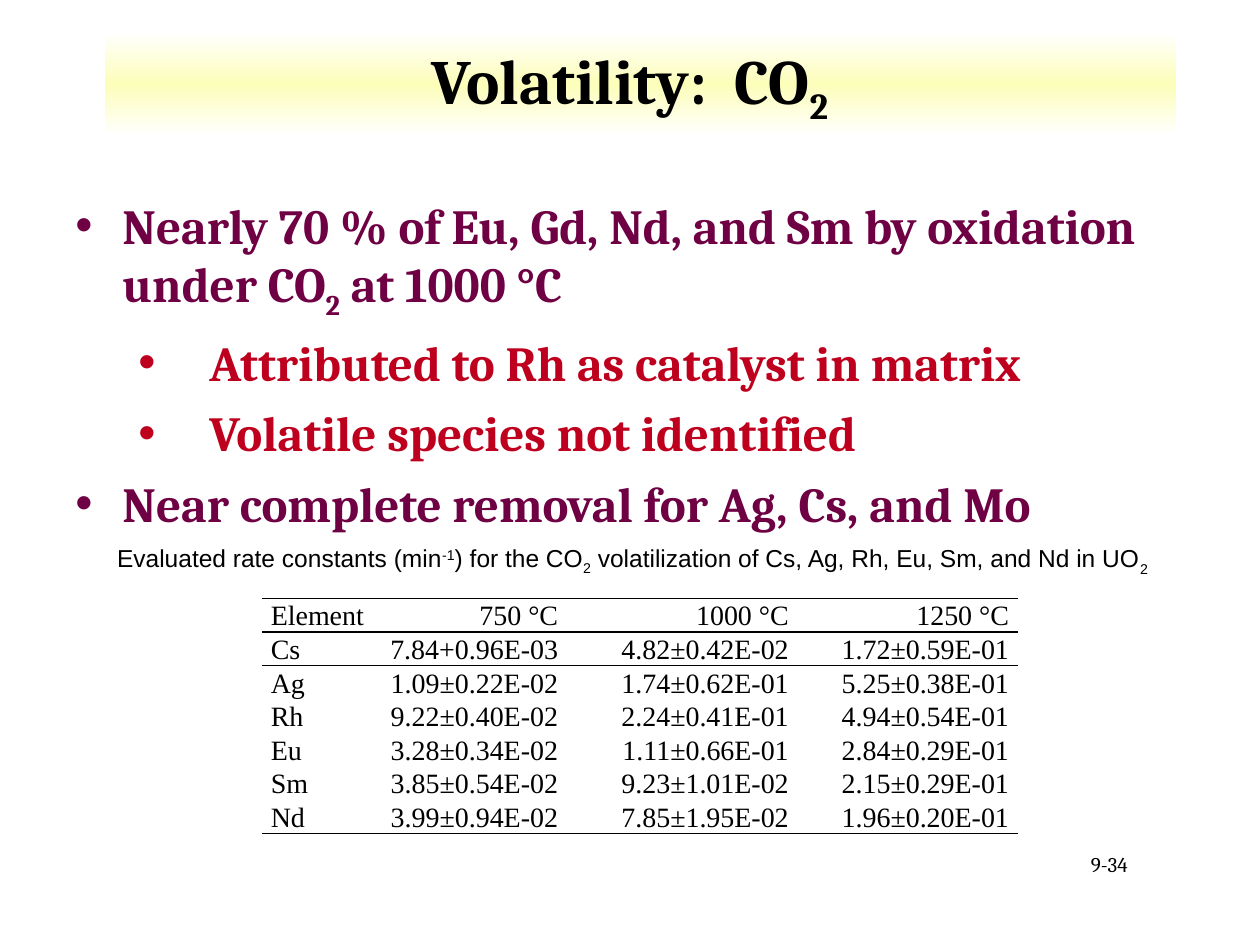
"""Build the slide on volatility under carbon dioxide."""
from copy import deepcopy
from dataclasses import dataclass, field

from lxml.etree import SubElement
from pptx import Presentation
from pptx.dml.color import RGBColor
from pptx.enum.shapes import MSO_SHAPE
from pptx.enum.text import MSO_ANCHOR, PP_ALIGN
from pptx.oxml.ns import qn
from pptx.util import Cm, Pt


@dataclass(frozen=True)
class Theme:
    black: str = "000000"
    white: str = "FFFFFF"
    band: str = "FCFEB9"
    purple: str = "6E0043"
    red: str = "BE001E"
    serif: str = "Cambria"
    sans: str = "Arial"
    tabular: str = "Times New Roman"
    title: float = 36
    body: float = 28
    cell: float = 16
    caption: float = 14
    number: float = 12
    rule: float = 1
    plain_table: str = "{2D5ABB26-0587-4C30-8999-92F81FD0307C}"


THEME = Theme()


@dataclass(frozen=True)
class Span:
    text: str
    baseline: int = 0


@dataclass(frozen=True)
class Style:
    name: str
    size: float
    color: str = THEME.black
    bold: bool = False


@dataclass(frozen=True)
class Place:
    left: float
    top: float
    width: float
    height: float

    def lengths(self) -> tuple:
        return tuple(Cm(n) for n in (self.left, self.top, self.width, self.height))


@dataclass(frozen=True)
class Bullet:
    spans: list[Span]
    color: str = THEME.purple
    level: int = 0
    margin: float = 0.95
    hanging: float = 0.95


@dataclass(frozen=True)
class RateTable:
    place: Place
    widths: list[float]
    rows: list[list[str]] = field(default_factory=list)


def sub_bullet(text: str) -> Bullet:
    return Bullet([Span(text)], THEME.red, 1, 2.7, 1.43)


TITLE = [Span("Volatility:  CO"), Span("2", -25)]
BULLETS = [
    Bullet([Span("Nearly 70 % of Eu, Gd, Nd, and Sm by oxidation under CO"),
            Span("2", -25), Span(" at 1000 °C")]),
    sub_bullet("Attributed to Rh as catalyst in matrix"),
    sub_bullet("Volatile species not identified"),
    Bullet([Span("Near complete removal for Ag, Cs, and Mo")]),
]
CAPTION = [
    Span("Evaluated rate constants (min"), Span("-1", 30), Span(") for the CO"), Span("2", -25),
    Span(" volatilization of Cs, Ag, Rh, Eu, Sm, and Nd in UO"), Span("2", -30),
]
RATES = RateTable(Place(5.28, 12.06, 15.24, 3.27), [2.34, 3.81, 4.65, 4.44], [
    ["Element", "750 °C", "1000 °C", "1250 °C"],
    ["Cs", "7.84+0.96E-03", "4.82±0.42E-02", "1.72±0.59E-01"],
    ["Ag", "1.09±0.22E-02", "1.74±0.62E-01", "5.25±0.38E-01"],
    ["Rh", "9.22±0.40E-02", "2.24±0.41E-01", "4.94±0.54E-01"],
    ["Eu", "3.28±0.34E-02", "1.11±0.66E-01", "2.84±0.29E-01"],
    ["Sm", "3.85±0.54E-02", "9.23±1.01E-02", "2.15±0.29E-01"],
    ["Nd", "3.99±0.94E-02", "7.85±1.95E-02", "1.96±0.20E-01"],
])


def apply(target, values: dict) -> None:
    for name, value in values.items():
        setattr(target, name, value)


def write(para, spans: list[Span], style: Style) -> None:
    for span in spans:
        run = para.add_run()
        run.text = span.text
        apply(run.font, {"name": style.name, "size": Pt(style.size), "bold": style.bold})
        run.font.color.rgb = RGBColor.from_string(style.color)
        if span.baseline:
            run._r.get_or_add_rPr().set("baseline", str(span.baseline * 1000))


def add_title(page, place: Place) -> None:
    box = page.shapes.add_shape(MSO_SHAPE.RECTANGLE, *place.lengths())
    box.shadow.inherit = False
    box.line.fill.background()
    box.fill.gradient()
    box.fill.gradient_angle = 90
    stops = next(box.element.iter(qn("a:gsLst")))
    stops.append(deepcopy(stops[0]))
    colors = (THEME.white, THEME.band, THEME.white)
    for index, (stop, color) in enumerate(zip(box.fill.gradient_stops, colors)):
        stop.position = index / 2
        stop.color.rgb = RGBColor.from_string(color)
    apply(box.text_frame, {"word_wrap": True, "vertical_anchor": MSO_ANCHOR.MIDDLE,
                           "margin_right": Cm(0.67)})
    para = box.text_frame.paragraphs[0]
    para.alignment = PP_ALIGN.CENTER
    write(para, TITLE, Style(THEME.serif, THEME.title, bold=True))


def add_text(page, place: Place, spans: list[Span], style: Style, wrap: bool = True) -> None:
    box = page.shapes.add_textbox(*place.lengths())
    box.text_frame.word_wrap = wrap
    write(box.text_frame.paragraphs[0], spans, style)


def add_bullets(page, place: Place, bullets: list[Bullet]) -> None:
    frame = page.shapes.add_textbox(*place.lengths()).text_frame
    frame.word_wrap = True
    for index, bullet in enumerate(bullets):
        para = frame.add_paragraph() if index else frame.paragraphs[0]
        apply(para, {"level": bullet.level, "space_before": Pt(6.6)})
        properties = para._p.get_or_add_pPr()
        properties.set("marL", str(Cm(bullet.margin)))
        properties.set("indent", str(-Cm(bullet.hanging)))
        SubElement(properties, qn("a:buFont"), typeface=THEME.sans)
        SubElement(properties, qn("a:buChar"), char="•")
        write(para, bullet.spans, Style(THEME.serif, THEME.body, bullet.color, True))


def add_border(cell, side: str) -> None:
    line = SubElement(cell._tc.get_or_add_tcPr(), qn(f"a:ln{side}"), w=str(Pt(THEME.rule)))
    SubElement(SubElement(line, qn("a:solidFill")), qn("a:srgbClr"), val=THEME.black)


def add_rates(page, rates: RateTable) -> None:
    last = len(rates.rows) - 1
    frame = page.shapes.add_table(last + 1, len(rates.widths), *rates.place.lengths())
    table = frame.table
    apply(table, {"first_row": False, "horz_banding": False})
    next(frame.element.iter(qn("a:tableStyleId"))).text = THEME.plain_table
    for column, width in zip(table.columns, rates.widths):
        column.width = Cm(width)
    for row_index, values in enumerate(rates.rows):
        table.rows[row_index].height = Cm(0.46)
        for column_index, value in enumerate(values):
            cell = table.cell(row_index, column_index)
            apply(cell, {"vertical_anchor": MSO_ANCHOR.BOTTOM, "margin_left": Cm(0.18),
                         "margin_right": Cm(0.18), "margin_top": 0, "margin_bottom": 0})
            if row_index in (0, 1):
                add_border(cell, "T")
            if row_index in (0, last):
                add_border(cell, "B")
            cell.fill.background()
            para = cell.text_frame.paragraphs[0]
            para.alignment = PP_ALIGN.RIGHT if column_index else PP_ALIGN.LEFT
            write(para, [Span(value)], Style(THEME.tabular, THEME.cell))


def main() -> None:
    deck = Presentation()
    apply(deck, {"slide_width": Cm(25.4), "slide_height": Cm(19.05)})
    page = deck.slides.add_slide(deck.slide_layouts[6])
    add_text(page, Place(21.74, 17.04, 1.37, 0.76), [Span("9-34")],
             Style(THEME.serif, THEME.number), wrap=False)
    add_title(page, Place(2.11, 0.64, 21.59, 2.11))
    add_bullets(page, Place(1.27, 3.81, 22.86, 6.55), BULLETS)
    add_rates(page, RATES)
    add_text(page, Place(2.11, 10.82, 22.02, 0.86), CAPTION, Style(THEME.sans, THEME.caption))
    deck.save("out.pptx")


if __name__ == "__main__":
    main()
